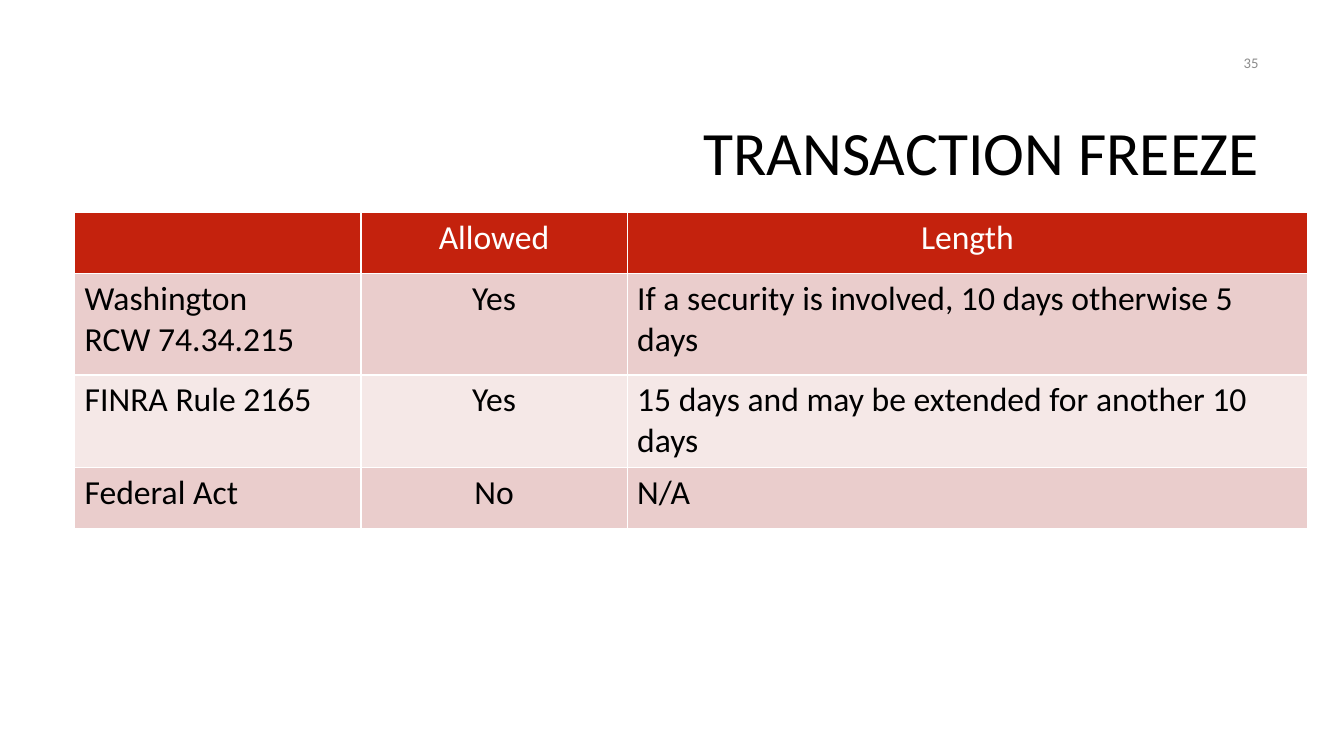
from pptx import Presentation
from pptx.dml.color import RGBColor
from pptx.enum.text import MSO_ANCHOR, PP_ALIGN
from pptx.util import Inches, Pt

TITLE = "TRANSACTION FREEZE"
PAGE_NUMBER = "35"
RULES = [
    ("", "Allowed", "Length"),
    ("Washington\nRCW 74.34.215", "Yes", "If a security is involved, 10 days otherwise 5 days"),
    ("FINRA Rule 2165", "Yes", "15 days and may be extended for another 10 days"),
    ("Federal Act", "No", "N/A"),
]
COLUMN_WIDTHS = [2.84, 2.64, 6.75]
ROW_HEIGHTS = [0.6, 1.01, 0.92, 0.6]

FONT = "Calibri"
BLACK = RGBColor(0x00, 0x00, 0x00)
WHITE = RGBColor(0xFF, 0xFF, 0xFF)
GREY = RGBColor(0x8C, 0x8C, 0x8C)
RED = RGBColor(0xC4, 0x22, 0x0D)
ROSE = RGBColor(0xEA, 0xCD, 0xCC)
PALE_ROSE = RGBColor(0xF5, 0xE8, 0xE7)


def style_paragraph(paragraph, size, color, align):
    paragraph.alignment = align
    paragraph.font.name = FONT
    paragraph.font.size = Pt(size)
    paragraph.font.bold = False
    paragraph.font.color.rgb = color


def add_label(slide, text, left, top, width, height, size, color):
    label = slide.shapes.add_textbox(Inches(left), Inches(top), Inches(width), Inches(height))
    frame = label.text_frame
    frame.word_wrap = True
    frame.vertical_anchor = MSO_ANCHOR.MIDDLE
    frame.text = text
    style_paragraph(frame.paragraphs[0], size, color, PP_ALIGN.RIGHT)
    return frame.paragraphs[0]


def add_rules(slide):
    table = slide.shapes.add_table(
        len(RULES), len(COLUMN_WIDTHS), Inches(0.74), Inches(2.11),
        Inches(sum(COLUMN_WIDTHS)), Inches(sum(ROW_HEIGHTS)),
    ).table
    for column, width in zip(table.columns, COLUMN_WIDTHS):
        column.width = Inches(width)
    for row, height in zip(table.rows, ROW_HEIGHTS):
        row.height = Inches(height)
    for r, rule in enumerate(RULES):
        header = r == 0
        fill = RED if header else ROSE if r % 2 else PALE_ROSE
        for c, text in enumerate(rule):
            cell = table.cell(r, c)
            cell.fill.solid()
            cell.fill.fore_color.rgb = fill
            cell.text = text
            align = PP_ALIGN.CENTER if header or c == 1 else PP_ALIGN.LEFT
            for paragraph in cell.text_frame.paragraphs:
                style_paragraph(paragraph, 24, WHITE if header else BLACK, align)


def main():
    deck = Presentation()
    deck.slide_width, deck.slide_height = Inches(13.33), Inches(7.5)
    slide = deck.slides.add_slide(deck.slide_layouts[6])
    heading = add_label(slide, TITLE, 3.17, 0.84, 9.42, 1.41, 44, BLACK)
    heading.line_spacing = 0.9
    add_rules(slide)
    add_label(slide, PAGE_NUMBER, 9.58, 0.42, 3, 0.4, 10.5, GREY)
    deck.save("out.pptx")


if __name__ == "__main__":
    main()
